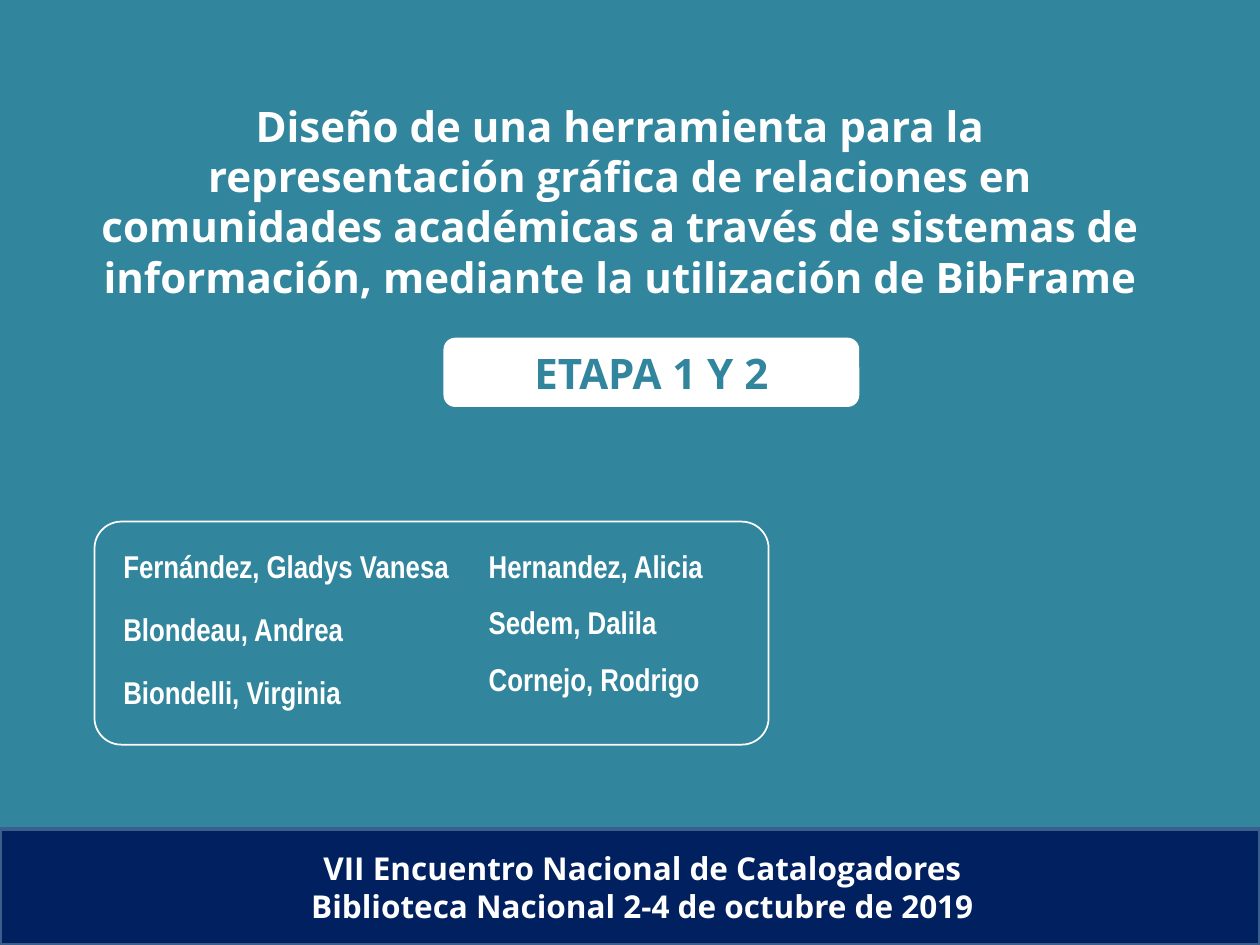
import pptx
import pptx.dml.color
import pptx.enum.shapes
import pptx.enum.text
import pptx.util

COLORS = {"teal": "31859C", "navy": "002060", "edge": "3A5F8C", "white": "FFFFFF"}
COLUMNS, ROWS = 100, 75
SHAPES = pptx.enum.shapes.MSO_SHAPE
ANCHORS = pptx.enum.text.MSO_ANCHOR
ALIGNMENTS = pptx.enum.text.PP_ALIGN

presentation = pptx.Presentation()
presentation.slide_width = pptx.util.Inches(10)
presentation.slide_height = pptx.util.Inches(7.5)
column = presentation.slide_width / COLUMNS
row = presentation.slide_height / ROWS
slide = presentation.slides.add_slide(presentation.slide_layouts[6])


def paint(fill, color):
    """Make a fill solid in a named colour, or clear it when there is none."""
    if color:
        fill.solid()
        fill.fore_color.rgb = pptx.dml.color.RGBColor.from_string(COLORS[color])
    else:
        fill.background()


def write(frame, lines, font, paragraph_format, anchor=ANCHORS.TOP):
    frame.word_wrap = True
    frame.vertical_anchor = anchor
    for index, line in enumerate(lines):
        paragraph = frame.paragraphs[0] if index == 0 else frame.add_paragraph()
        for name, value in paragraph_format.items():
            setattr(paragraph, name, value)
        run = paragraph.add_run()
        run.text = line
        for name, value in {"bold": True, "name": font["name"], "size": font["size"]}.items():
            setattr(run.font, name, value)
        paint(run.font.fill, font["color"])


paint(slide.background.fill, "teal")

heading = {"name": "Open Sans", "size": pptx.util.Pt(24), "color": "white"}
footer = {**heading, "size": pptx.util.Pt(18)}
author = {**footer, "name": "Arial Narrow"}
centered = {"alignment": ALIGNMENTS.CENTER}
spaced = {"alignment": ALIGNMENTS.LEFT, "line_spacing": 1.5}

# Panels: kind, (left, top, width, height) in grid units, corner, fill, line, line width
panels = {}
for name, kind, (left, top, width, height), corner, fill, line, weight in [
    ("footer", SHAPES.RECTANGLE, (0, 65.8, 100, 9.2), None, "navy", "edge", 2),
    ("stage", SHAPES.ROUNDED_RECTANGLE, (35.2, 26.8, 33, 5.5), 0.17, "white", None, 0),
    ("authors", SHAPES.ROUNDED_RECTANGLE, (7.5, 41.4, 53.5, 17.7), 0.12, None, "white", 1),
]:
    shape = slide.shapes.add_shape(
        kind, round(left * column), round(top * row), round(width * column), round(height * row))
    shape.shadow.inherit = False
    if corner:
        shape.adjustments[0] = corner
    paint(shape.fill, fill)
    paint(shape.line.fill, line)
    if line:
        shape.line.width = pptx.util.Pt(weight)
    panels[name] = shape

write(panels["stage"].text_frame, ["ETAPA 1 Y 2"], {**heading, "color": "teal"},
      centered, ANCHORS.MIDDLE)

# Texts: place in grid units, lines, font, paragraph format, anchor
frames = {}
for name, (left, top, width, height), lines, font, paragraph_format, anchor in [
    ("title", (6.7, 9.9, 85, 16.1),
     ["Diseño de una herramienta para la representación gráfica de relaciones en "
      "comunidades académicas a través de sistemas de información, mediante la "
      "utilización de BibFrame"], heading, centered, ANCHORS.MIDDLE),
    ("first authors", (8.8, 41.4, 32.2, 19.2),
     ["Fernández, Gladys Vanesa", "Blondeau, Andrea", "Biondelli, Virginia"],
     author, {**spaced, "space_before": pptx.util.Pt(3.6)}, ANCHORS.TOP),
    ("event", (9.2, 66.9, 85, 7.1),
     ["VII Encuentro Nacional de Catalogadores",
      "Biblioteca Nacional 2-4 de octubre de 2019"], footer, centered, ANCHORS.TOP),
    ("second authors", (37.8, 41.4, 24.8, 17.7),
     ["Hernandez, Alicia", "Sedem, Dalila", "Cornejo, Rodrigo"],
     author, spaced, ANCHORS.TOP),
]:
    box = slide.shapes.add_textbox(
        round(left * column), round(top * row), round(width * column), round(height * row))
    write(box.text_frame, lines, font, paragraph_format, anchor)
    frames[name] = box.text_frame

# The title sits one half line above the middle of its box
frames["title"].margin_bottom = round(4.5 * row)
# The first line of the event is centred slightly to the left
event_properties = frames["event"].paragraphs[0]._p.get_or_add_pPr()
event_properties.set("marR", str(round(1.4 * column)))

presentation.save("out.pptx")
